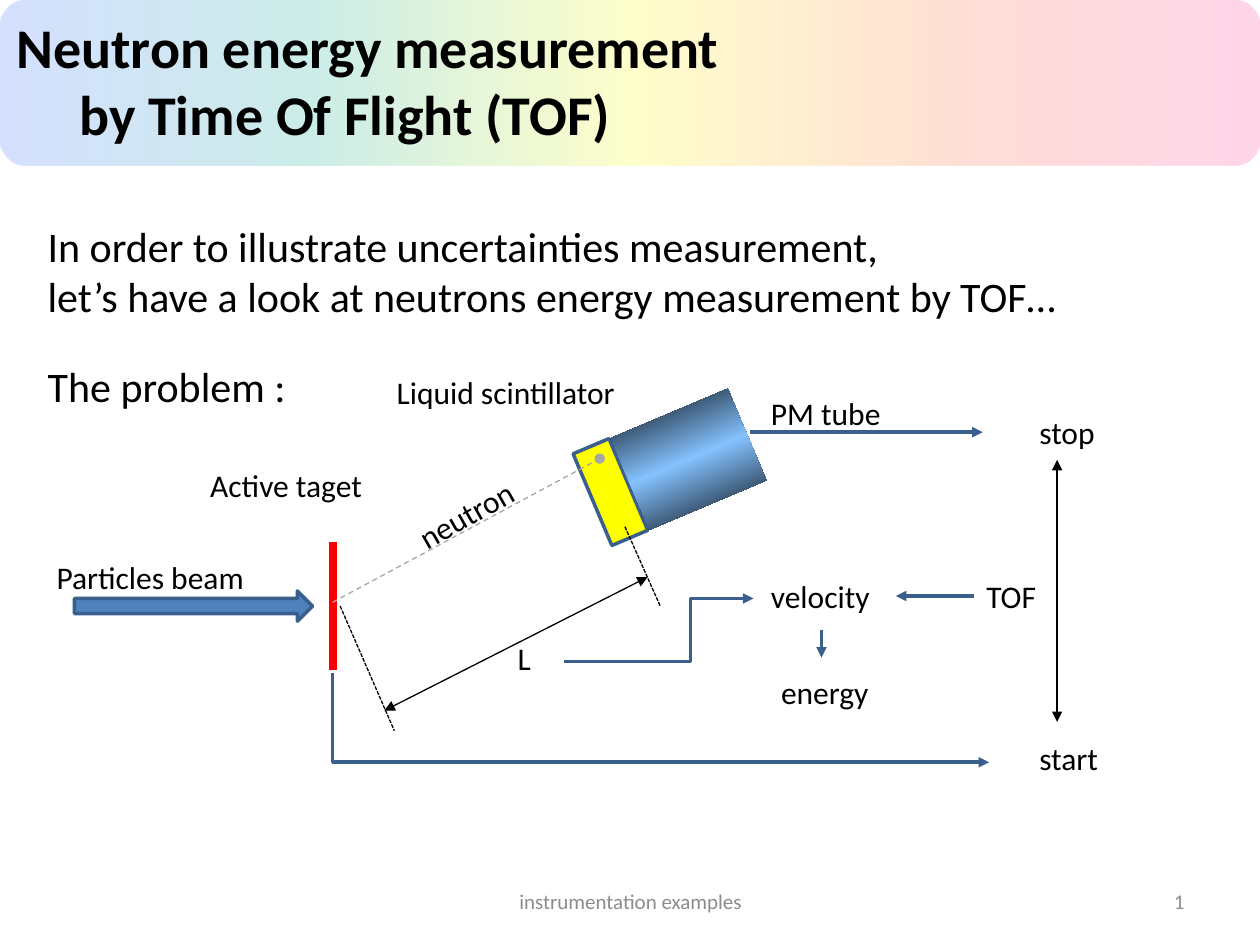
from dataclasses import dataclass
from lxml.etree import SubElement
from pptx import Presentation
from pptx.dml.color import RGBColor
from pptx.enum.dml import MSO_LINE
from pptx.enum.shapes import MSO_CONNECTOR, MSO_SHAPE
from pptx.enum.text import MSO_ANCHOR, MSO_AUTO_SIZE, PP_ALIGN
from pptx.oxml.ns import qn
from pptx.util import Inches, Pt


@dataclass(frozen=True)
class Theme:
    font: str = "Calibri"
    title_size: float = 32
    body_size: float = 24
    label_size: float = 18
    footer_size: float = 12
    ink: str = "000000"
    muted: str = "8C8C8C"
    trace: str = "A6A6A6"
    target: str = "FF0000"
    scintillator: str = "FFFF00"
    beam: str = "4F81BD"
    signal: str = "3A5F8C"
    thin: float = 0.75
    medium: float = 2
    thick: float = 4.5
    rainbow: tuple = ("FF3399", "FF6633", "FFFF00", "01A78F", "3366FF")
    metal: tuple = ("000000", "85C2FF", "000000")


@dataclass(frozen=True)
class Box:
    left: float
    top: float
    width: float
    height: float

    def point(self, x, y):
        return Inches(self.left + x), Inches(self.top + y)

    def frame(self, x=0, y=0, width=None, height=None):
        size = (width or self.width, height or self.height)
        return *self.point(x, y), *map(Inches, size)


THEME = Theme()
LABEL_HEIGHT = 0.4
DETECTOR_TILT = 337.1


def write(text_frame, lines, size, color=THEME.ink, align=PP_ALIGN.LEFT,
          bold=False, wrap=True, anchor=MSO_ANCHOR.TOP):
    text_frame.text = "\n".join(lines)
    text_frame.word_wrap = wrap
    text_frame.vertical_anchor = anchor
    for paragraph in text_frame.paragraphs:
        paragraph.alignment = align
        paragraph.font.name = THEME.font
        paragraph.font.size = Pt(size)
        paragraph.font.bold = bold
        paragraph.font.color.rgb = RGBColor.from_string(color)


def add_text(slide, frame, lines, size, **style):
    shape = slide.shapes.add_textbox(*frame)
    write(shape.text_frame, lines, size, **style)
    return shape


def add_label(slide, box, text, x, y, width):
    frame = box.frame(x, y, width, LABEL_HEIGHT)
    return add_text(slide, frame, [text], THEME.label_size)


def style_line(line, color, width, dash=None, head=None, tail=None):
    line.color.rgb = RGBColor.from_string(color)
    line.width = Pt(width)
    if dash:
        line.dash_style = dash
    for tag, kind in (("a:headEnd", head), ("a:tailEnd", tail)):
        if kind:
            SubElement(line._get_or_add_ln(), qn(tag), type=kind)


def add_line(slide, box, start, end, color=THEME.ink, width=THEME.thin, **ends):
    connector = slide.shapes.add_connector(
        MSO_CONNECTOR.STRAIGHT, *box.point(*start), *box.point(*end))
    style_line(connector.line, color, width, **ends)
    SubElement(connector.element.spPr, qn("a:effectLst"))


def add_signal(slide, box, *points):
    if len(points) == 2:
        add_line(slide, box, *points, THEME.signal, THEME.medium, tail="triangle")
        return
    start, *rest = [box.point(*point) for point in points]
    builder = slide.shapes.build_freeform(*start)
    builder.add_line_segments(rest, close=False)
    shape = builder.convert_to_shape()
    shape.fill.background()
    shape.shadow.inherit = False
    style_line(shape.line, THEME.signal, THEME.medium, tail="triangle")


def add_solid(slide, kind, frame, color=None, rotation=0):
    shape = slide.shapes.add_shape(kind, *frame)
    shape.shadow.inherit = False
    shape.rotation = rotation
    if color:
        shape.fill.solid()
        shape.fill.fore_color.rgb = RGBColor.from_string(color)
        style_line(shape.line, THEME.signal, THEME.medium)
    else:
        shape.line.fill.background()
    return shape


def fill_gradient(shape, colors, angle, opacity=100):
    shape.fill.gradient()
    gradient = shape.element.spPr.find(qn("a:gradFill"))
    for child in list(gradient):
        gradient.remove(child)
    gradient.set("rotWithShape", "1")
    stops = SubElement(gradient, qn("a:gsLst"))
    for index, color in enumerate(colors):
        position = 100000 * index // (len(colors) - 1)
        stop = SubElement(stops, qn("a:gs"), pos=str(position))
        value = SubElement(stop, qn("a:srgbClr"), val=color)
        if opacity < 100:
            SubElement(value, qn("a:alpha"), val=str(opacity * 1000))
    SubElement(gradient, qn("a:lin"), ang=str(angle * 60000), scaled="0")


def add_title_banner(slide, box):
    banner = add_solid(slide, MSO_SHAPE.ROUNDED_RECTANGLE, box.frame())
    fill_gradient(banner, THEME.rainbow, 180, opacity=20)
    title = slide.shapes.title
    title.element.addprevious(banner.element)
    title.left, title.top, title.width, title.height = box.frame(0.03, 0.05, 5.83, 1.18)
    write(title.text_frame, ["Neutron energy measurement", "\tby Time Of Flight (TOF)"],
          THEME.title_size, bold=True, wrap=False)
    title.text_frame.auto_size = MSO_AUTO_SIZE.SHAPE_TO_FIT_TEXT


def add_introduction(slide, box):
    add_text(slide, box.frame(height=0.91),
             ["In order to illustrate uncertainties measurement,",
              "let’s have a look at neutrons energy measurement by TOF…"], THEME.body_size)
    add_text(slide, box.frame(y=1.11, width=2.11, height=0.5),
             ["The problem :"], THEME.body_size)


def add_experiment(slide, box):
    add_solid(slide, MSO_SHAPE.RIGHT_ARROW, box.frame(0.29, 1.79, 1.89, 0.24), THEME.beam)
    add_line(slide, box, (2.34, 1.4), (2.34, 2.42), THEME.target, THEME.thick)
    add_solid(slide, MSO_SHAPE.RECTANGLE, box.frame(4.39, 0.61, 0.31, 0.79),
              THEME.scintillator, DETECTOR_TILT)
    tube = add_solid(slide, MSO_SHAPE.RECTANGLE, box.frame(4.66, 0.35, 1.01, 0.79),
                     rotation=DETECTOR_TILT)
    fill_gradient(tube, THEME.metal, 90)
    for label in (("Particles beam", 0.05, 1.48, 1.71), ("Active taget", 1.27, 0.75, 1.42),
                  ("Liquid scintillator", 2.75, 0.01, 1.95), ("PM tube", 5.72, 0.18, 1.08),
                  ("L", 3.71, 2.12, 0.31)):
        add_label(slide, box, *label)
    add_line(slide, box, (2.34, 1.88), (4.46, 0.74), THEME.trace,
             dash=MSO_LINE.DASH, tail="oval")
    add_label(slide, box, "neutron", 2.89, 0.98, 1.03).rotation = 330.4
    for start, end in (((4.66, 1.28), (4.94, 1.91)), ((2.4, 1.91), (2.83, 2.9))):
        add_line(slide, box, start, end, dash=MSO_LINE.SQUARE_DOT)
    add_line(slide, box, (2.75, 2.74), (4.84, 1.68), head="triangle", tail="triangle")


def add_timing(slide, box):
    for points in (((3.35, 0.23), (5.2, 0.23)),
                   ((0.04, 2.14), (0.04, 2.85), (5.25, 2.85)),
                   ((5.13, 1.53), (4.51, 1.53)),
                   ((1.88, 2.05), (2.88, 2.05), (2.88, 1.55), (3.38, 1.55)),
                   ((3.92, 1.8), (3.92, 2.02))):
        add_signal(slide, box, *points)
    for label in (("start", 5.55, 2.62, 0.67), ("stop", 5.55, 0.03, 0.65),
                  ("TOF", 5.13, 1.33, 0.6), ("velocity", 3.42, 1.33, 0.99),
                  ("energy", 3.5, 2.09, 0.91)):
        add_label(slide, box, *label)
    add_line(slide, box, (5.79, 2.53), (5.79, 0.45), head="triangle", tail="triangle")


def add_footer(slide, box):
    for text, x, width, align in (("instrumentation examples", 0, 3.17, PP_ALIGN.CENTER),
                                  ("1", 3.75, 2.33, PP_ALIGN.RIGHT)):
        add_text(slide, box.frame(x, width=width), [text], THEME.footer_size,
                 color=THEME.muted, align=align, anchor=MSO_ANCHOR.MIDDLE)


def main():
    presentation = Presentation()
    presentation.slide_width, presentation.slide_height = Inches(10), Inches(7.5)
    slide = presentation.slides.add_slide(presentation.slide_layouts[5])
    add_title_banner(slide, Box(0, 0, 10, 1.31))
    add_introduction(slide, Box(0.28, 1.7, 8.27, 1.61))
    add_experiment(slide, Box(0.3, 2.9, 6.8, 2.9))
    add_timing(slide, Box(2.6, 3.2, 6.22, 3.02))
    add_footer(slide, Box(3.42, 6.95, 6.08, 0.4))
    presentation.save("out.pptx")


if __name__ == "__main__":
    main()
